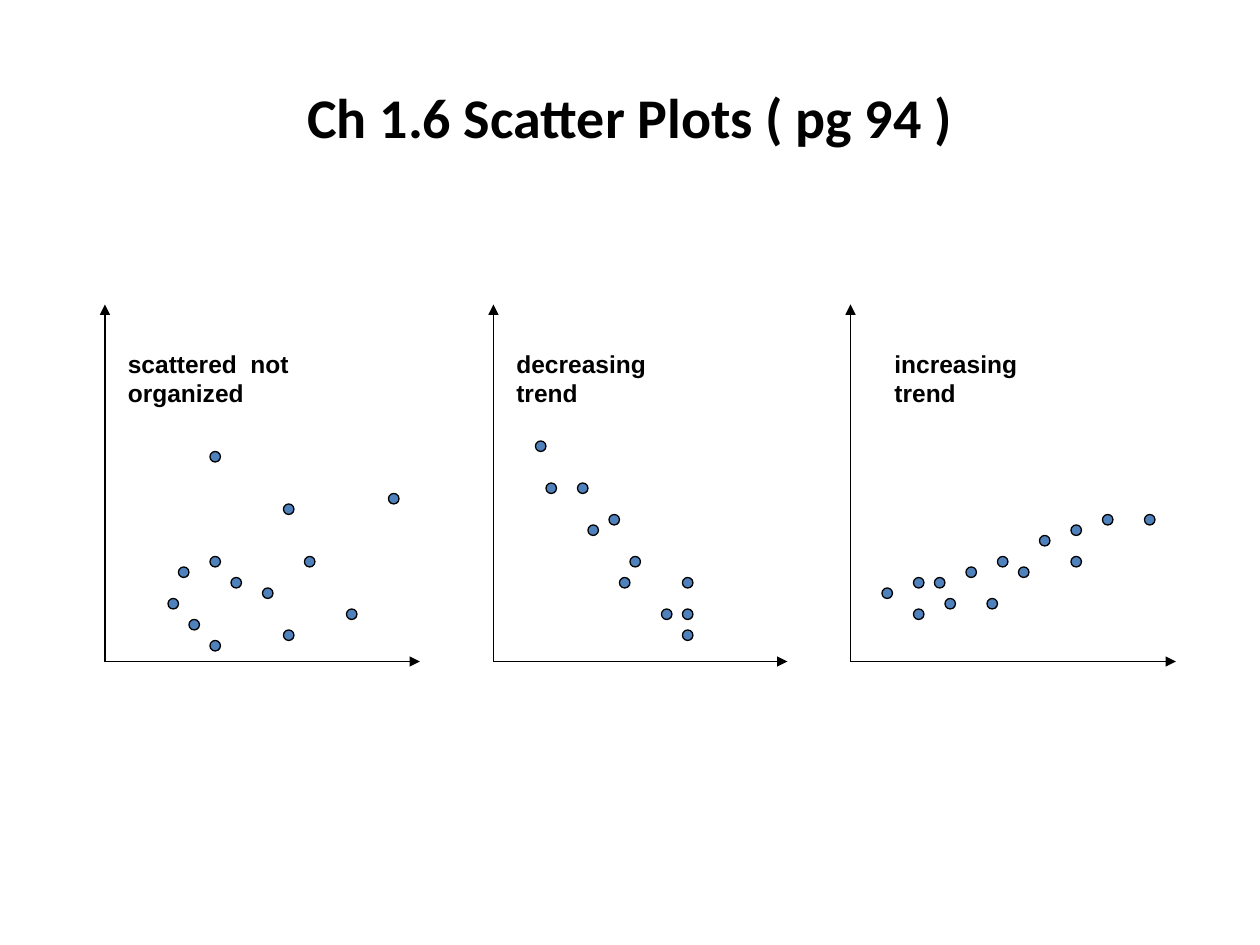
"""Build a slide comparing three kinds of scatter plot."""
from lxml import etree
from pptx import Presentation
from pptx.dml.color import RGBColor
from pptx.enum.shapes import MSO_CONNECTOR, MSO_SHAPE
from pptx.enum.text import MSO_ANCHOR, PP_ALIGN
from pptx.oxml.ns import qn
from pptx.util import Inches, Pt

TITLE = "Ch 1.6 Scatter Plots ( pg 94 )"
PLOTS = [
    {"label": "scattered  not\vorganized", "label_width": 2.44, "indent": 1,
     "origin": 10, "length": 30,
     "points": [(6, 6), (10, 10), (7, 9), (19, 10), (17, 15), (17, 3), (12, 8),
                (15, 7), (10, 20), (23, 5), (8, 4), (10, 2), (27, 16)]},
    {"label": "decreasing\vtrend", "label_width": 1.76, "indent": 1,
     "origin": 47, "length": 28,
     "points": [(4, 21), (8, 17), (11, 14), (9, 13), (12, 8), (13, 10),
                (16, 5), (5, 17), (18, 3), (18, 5), (18, 8)]},
    {"label": "increasing\vtrend", "label_width": 1.71, "indent": 3,
     "origin": 81, "length": 31,
     "points": [(24, 14), (21, 13), (18, 12), (14, 10), (11, 9), (8, 8), (6, 8),
                (3, 7), (9, 6), (28, 14), (21, 10), (16, 9), (13, 6), (6, 5)]},
]
THEME = {
    "ink": RGBColor.from_string("000000"),
    "dot": RGBColor.from_string("4F81BD"),
    "line": Pt(0.75),
    "title": {"name": "Calibri", "size": Pt(32), "bold": True},
    "label": {"name": "Arial", "size": Pt(14), "bold": True},
}
UNIT = Inches(1) / 12
BASELINE, AXIS_HEIGHT = 63, 34
LABEL_TOP, LABEL_HEIGHT = Inches(2.72), Inches(0.33)


def grid(units):
    return round(units * UNIT)


def write(frame, text, style):
    frame.text = text
    for run in frame.paragraphs[0].runs:
        for attribute, value in THEME[style].items():
            setattr(run.font, attribute, value)
        run.font.color.rgb = THEME["ink"]


def outline(line):
    line.color.rgb = THEME["ink"]
    line.width = THEME["line"]


def add_axis(slide, origin, end_x, end_y):
    axis = slide.shapes.add_connector(
        MSO_CONNECTOR.STRAIGHT, grid(origin), grid(BASELINE), grid(end_x), grid(end_y))
    outline(axis.line)
    properties = axis._element.spPr
    etree.SubElement(properties.find(qn("a:ln")), qn("a:tailEnd"), type="triangle")
    etree.SubElement(properties, qn("a:effectLst"))


def add_dot(slide, x, y):
    dot = slide.shapes.add_shape(MSO_SHAPE.OVAL, grid(x), grid(y), grid(1), grid(1))
    dot.shadow.inherit = False
    dot.fill.solid()
    dot.fill.fore_color.rgb = THEME["dot"]
    outline(dot.line)


def add_plot(slide, plot):
    origin = plot["origin"]
    add_axis(slide, origin, origin + plot["length"], BASELINE)
    add_axis(slide, origin, origin, BASELINE - AXIS_HEIGHT)
    for x, y in plot["points"]:
        add_dot(slide, origin + x, BASELINE - y)
    label = slide.shapes.add_textbox(
        grid(origin + plot["indent"]), LABEL_TOP, Inches(plot["label_width"]), LABEL_HEIGHT)
    label.text_frame.word_wrap = True
    write(label.text_frame, plot["label"], "label")


def main():
    deck = Presentation()
    deck.slide_width, deck.slide_height = Inches(10), Inches(7.5)
    slide = deck.slides.add_slide(deck.slide_layouts[5])
    title = slide.shapes.title
    title.left, title.top = Inches(0.5), Inches(0.3)
    title.width, title.height = Inches(9), Inches(1.25)
    write(title.text_frame, TITLE, "title")
    title.text_frame.vertical_anchor = MSO_ANCHOR.MIDDLE
    title.text_frame.paragraphs[0].alignment = PP_ALIGN.CENTER
    for plot in PLOTS:
        add_plot(slide, plot)
    deck.save("out.pptx")


if __name__ == "__main__":
    main()
